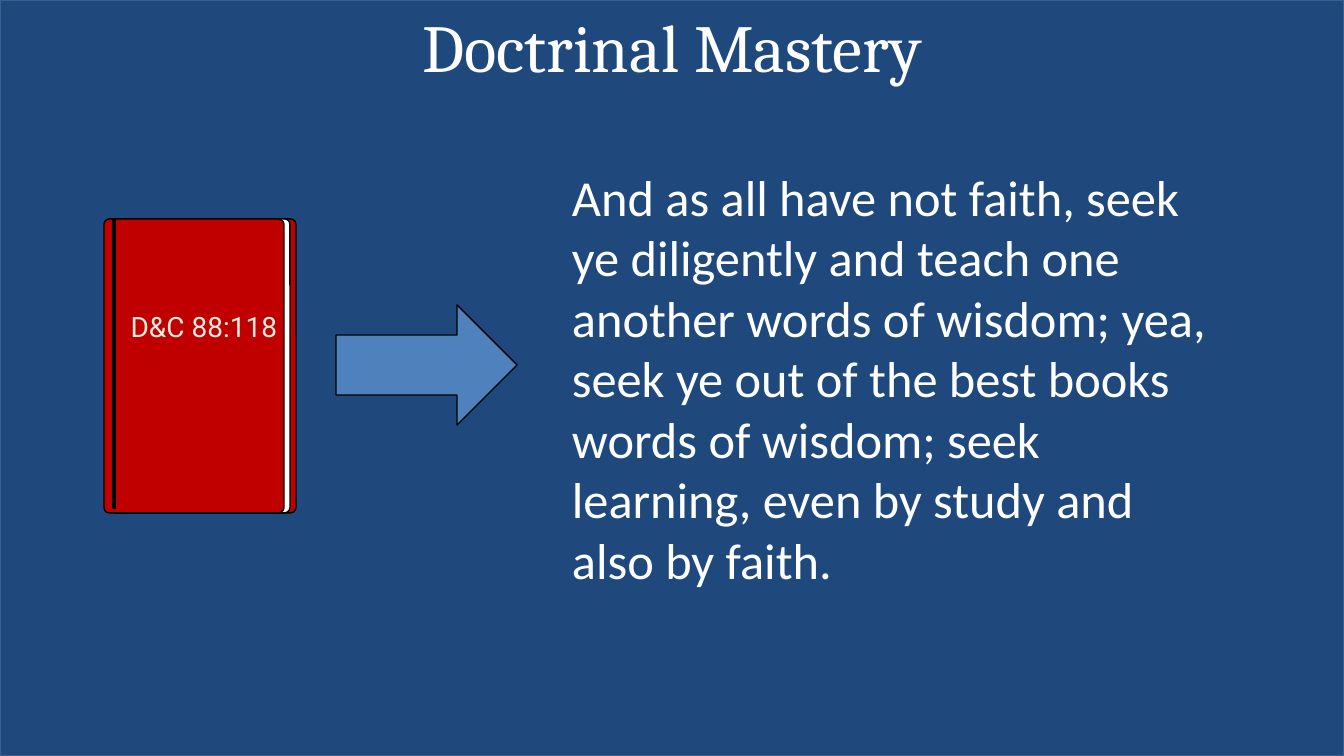
from lxml import etree
from pptx import Presentation
from pptx.dml.color import RGBColor
from pptx.enum.shapes import MSO_CONNECTOR, MSO_SHAPE
from pptx.enum.text import MSO_ANCHOR, MSO_AUTO_SIZE, PP_ALIGN
from pptx.oxml.ns import qn
from pptx.util import Pt

RECT, ROUNDED, ARROW = MSO_SHAPE.RECTANGLE, MSO_SHAPE.ROUNDED_RECTANGLE, MSO_SHAPE.RIGHT_ARROW
STRAIGHT = MSO_CONNECTOR.STRAIGHT
TOP, NO_FIT = MSO_ANCHOR.TOP, MSO_AUTO_SIZE.NONE
LEFT, CENTER = PP_ALIGN.LEFT, PP_ALIGN.CENTER

WIDTH, HEIGHT = 1344, 756
SCALE = 12192000 / WIDTH
COLORS = {
    "navy": "1F497D", "edge": "3A5F8C", "arrow": "4F81BD", "red": "C00000",
    "white": "FFFFFF", "black": "000000", "cream": "EEECE1",
}
VERSE = ("And as all have not\u00a0faith, seek ye diligently and\u00a0teach\u00a0one "
         "another words of\u00a0wisdom; yea, seek ye out of the best\u00a0books words of "
         "wisdom; seek learning, even by study and also by faith.")


def px(*lengths):
    return [round(n * SCALE) for n in lengths]


def color(name):
    return RGBColor.from_string(COLORS[name])


def add_block(shapes, kind, box, fill, line):
    sp = shapes.add_shape(kind, *px(*box))
    sp.shadow.inherit = False
    sp.fill.solid()
    sp.fill.fore_color.rgb = color(fill)
    sp.line.color.rgb = color(line)
    sp.line.width = Pt(1)
    return sp


def write(sp, text, size, font, ink, align):
    tf = sp.text_frame
    tf.text = text
    tf.word_wrap = True
    tf.auto_size = NO_FIT
    tf.vertical_anchor = TOP
    p = tf.paragraphs[0]
    p.alignment = align
    r = p.runs[0]
    r.font.size = Pt(size)
    r.font.name = font
    r.font.color.rgb = color(ink)


def add_title(s, box):
    title = s.shapes.title
    title.left, title.top, title.width, title.height = px(*box)
    write(title, "Doctrinal Mastery", 48, "Cambria", "white", CENTER)


def add_backdrop(s, box):
    panel = add_block(s.shapes, RECT, box, "navy", "edge")
    # Keep the backdrop behind the title
    s.shapes.title._element.addprevious(panel._element)


def add_verse(s, box):
    write(s.shapes.add_textbox(*px(*box)), VERSE, 36, "Calibri", "white", LEFT)


def add_book(s, box):
    x, y, w, h = box
    page_step = 6
    cover_w = w - 2 * page_step
    book = s.shapes.add_group_shape().shapes

    # Back cover, pages, front cover
    for step, fill in ((2, "red"), (1, "white"), (0, "red")):
        layer = add_block(book, ROUNDED, (x + step * page_step, y, cover_w, h), fill, "black")
        layer.adjustments[0] = 0.03

    # Reference on the cover
    label = book.add_textbox(*px(x - 26, y + 86, 252, 44))
    write(label, "D&C 88:118", 20, "Roboto", "cream", CENTER)

    # Spine crease
    crease = book.add_connector(STRAIGHT, *px(x + 10, y + h - 4, x + 10, y))
    crease.line.color.rgb = color("black")
    crease.line.width = Pt(3)
    etree.SubElement(crease._element.spPr, qn("a:effectLst"))


def add_arrow(s, box):
    add_block(s.shapes, ARROW, box, "arrow", "black")


def main():
    prs = Presentation()
    prs.slide_width, prs.slide_height = px(WIDTH, HEIGHT)
    s = prs.slides.add_slide(prs.slide_layouts[5])
    add_backdrop(s, (0, 0, WIDTH, HEIGHT))
    add_title(s, (0, 0, WIDTH, 92))
    add_verse(s, (562, 161, 672, 437))
    add_book(s, (104, 219, 192, 294))
    add_arrow(s, (336, 305, 181, 120))
    prs.save("out.pptx")


if __name__ == "__main__":
    main()
